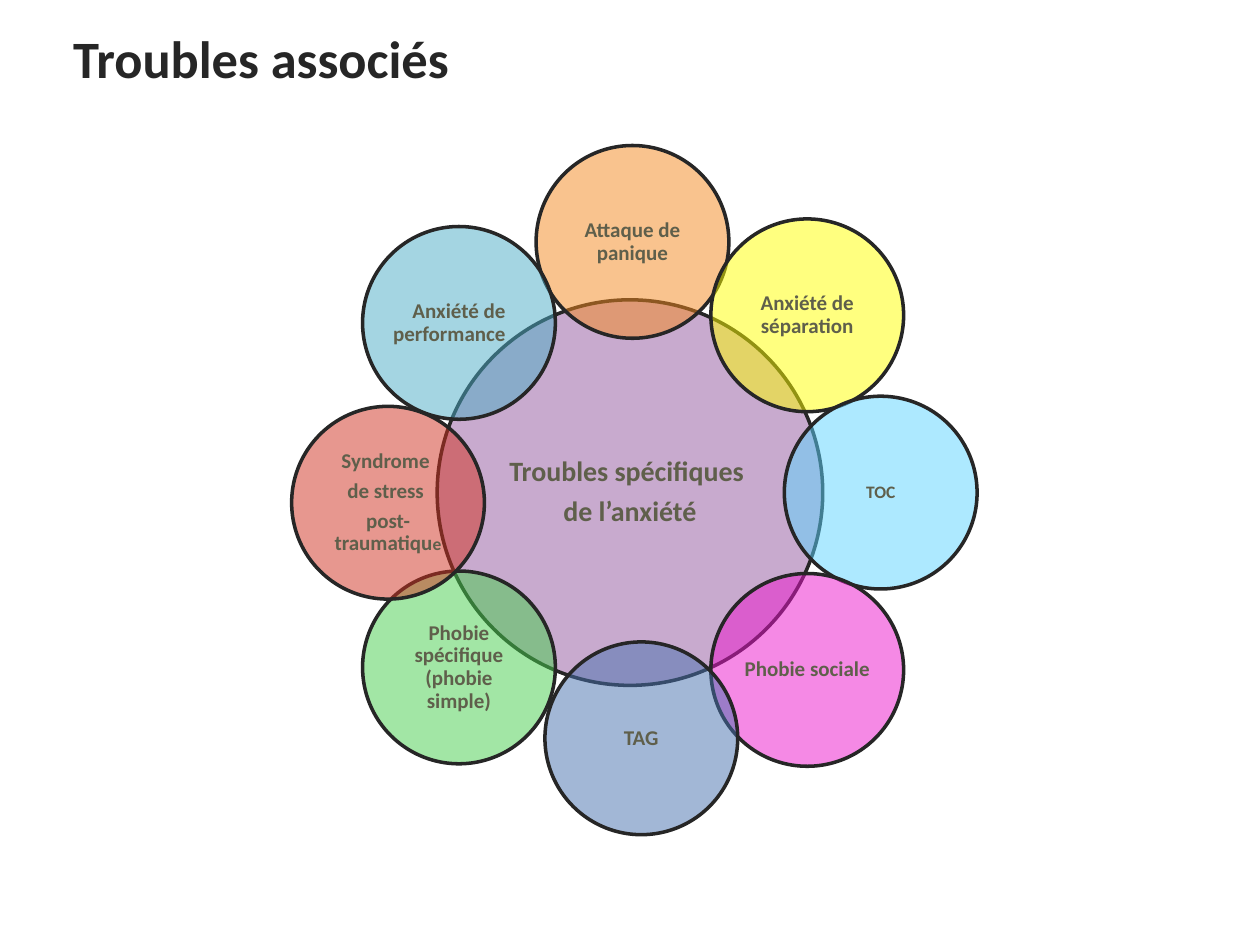
import math

import pptx
import pptx.dml.color
import pptx.enum.shapes
import pptx.enum.text
import pptx.oxml
import pptx.oxml.ns
import pptx.util

Inches, Pt = pptx.util.Inches, pptx.util.Pt
PP_ALIGN = pptx.enum.text.PP_ALIGN

FONT = "Calibri"
COLORS = {
    "ink": "262626", "label": "5F5F4B", "violet": "93579F", "orange": "F4891E",
    "yellow": "FFFF00", "sky": "5DD4FF", "pink": "EC14CD", "blue": "4771AF",
    "green": "46CE4C", "red": "D03120", "teal": "4BACC6",
}

# Wheel geometry in inches
CENTER_X, CENTER_Y = 5, 3.91
RING_RADIUS = 1.99
HUB_SIZE, PETAL_SIZE = 3.06, 1.53

# Clockwise from the top: colour, nudge off the ring, paragraphs of (text, size)
PETALS = [
    ("orange", (0.02, 0), [[("Attaque de panique", 12)]]),
    ("yellow", (0, 0), [[("Anxiété de séparation", 12)]]),
    ("sky", (0, 0), [[("TOC", 10)]]),
    ("pink", (0, 0), [[("Phobie sociale", 12)]]),
    ("blue", (0.09, -0.04), [[("TAG", 12)]]),
    ("green", (0.05, -0.02), [[("Phobie spécifique (phobie simple)", 12)]]),
    ("red", (0.07, 0.08), [[("Syndrome ", 12)], [("de stress ", 12)],
                           [("post-traumatiqu", 12), ("e", 10)]]),
    ("teal", (0.05, 0.06), [[("Anxiété de performance", 12)]]),
]


def rgb(name):
    return pptx.dml.color.RGBColor.from_string(COLORS[name])


def add_run(p, text, size, color):
    r = p.add_run()
    r.text = text
    r.font.name = FONT
    r.font.size = Pt(size)
    r.font.bold = True
    r.font.color.rgb = rgb(color)


def set_opacity(sp, percent):
    color = sp.fill._xPr.find(".//" + pptx.oxml.ns.qn("a:srgbClr"))
    color.append(pptx.oxml.parse_xml(
        f'<a:alpha {pptx.oxml.ns.nsdecls("a")} val="{percent * 1000}"/>'))


def add_circle(shapes, x, y, size, color, paragraphs):
    """Half-transparent circle centred on (x, y), with its label inside."""
    sp = shapes.add_shape(
        pptx.enum.shapes.MSO_SHAPE.OVAL, Inches(x - size / 2),
        Inches(y - size / 2), Inches(size), Inches(size))
    sp.shadow.inherit = False
    sp.fill.solid()
    sp.fill.fore_color.rgb = rgb(color)
    set_opacity(sp, 50)
    sp.line.color.rgb = rgb("ink")
    sp.line.width = Pt(2)

    tf = sp.text_frame
    tf.word_wrap = True
    tf.vertical_anchor = pptx.enum.text.MSO_ANCHOR.MIDDLE
    tf.margin_left = tf.margin_right = Inches(0.02)
    tf.margin_top = tf.margin_bottom = Inches(0.02)
    for i, runs in enumerate(paragraphs):
        p = tf.paragraphs[0] if i == 0 else tf.add_paragraph()
        p.alignment = PP_ALIGN.CENTER
        p.line_spacing = 0.9
        p.space_after = Pt(0.35 * runs[0][1])
        for text, size in runs:
            add_run(p, text, size, "label")
    return sp


def add_title(s, text):
    title = s.shapes.title
    title.left, title.top = Inches(0.48), Inches(0.08)
    title.width, title.height = Inches(9.19), Inches(0.75)
    tf = title.text_frame
    tf.vertical_anchor = pptx.enum.text.MSO_ANCHOR.MIDDLE
    p = tf.paragraphs[0]
    p.alignment = PP_ALIGN.LEFT
    add_run(p, text, 30, "ink")


def add_wheel(s):
    shapes = s.shapes.add_group_shape().shapes
    # Hub
    add_circle(shapes, CENTER_X, CENTER_Y, HUB_SIZE, "violet",
               [[("Troubles spécifiques ", 16)], [("de l’anxiété", 16)]])
    # Petals at equal angles
    for i, (color, (dx, dy), paragraphs) in enumerate(PETALS):
        angle = 2 * math.pi * i / len(PETALS)
        x = CENTER_X + RING_RADIUS * math.sin(angle) + dx
        y = CENTER_Y - RING_RADIUS * math.cos(angle) + dy
        sp = add_circle(shapes, x, y, PETAL_SIZE, color, paragraphs)
    # The last label is set flush right, clear of the hub
    tf = sp.text_frame
    tf.margin_left, tf.margin_right = 0, Inches(0.17)
    tf.paragraphs[0].alignment = PP_ALIGN.RIGHT


def main():
    prs = pptx.Presentation()
    prs.slide_width, prs.slide_height = Inches(10), Inches(7.5)
    s = prs.slides.add_slide(prs.slide_layouts[5])
    add_title(s, "Troubles associés")
    add_wheel(s)
    prs.save("out.pptx")


if __name__ == "__main__":
    main()
